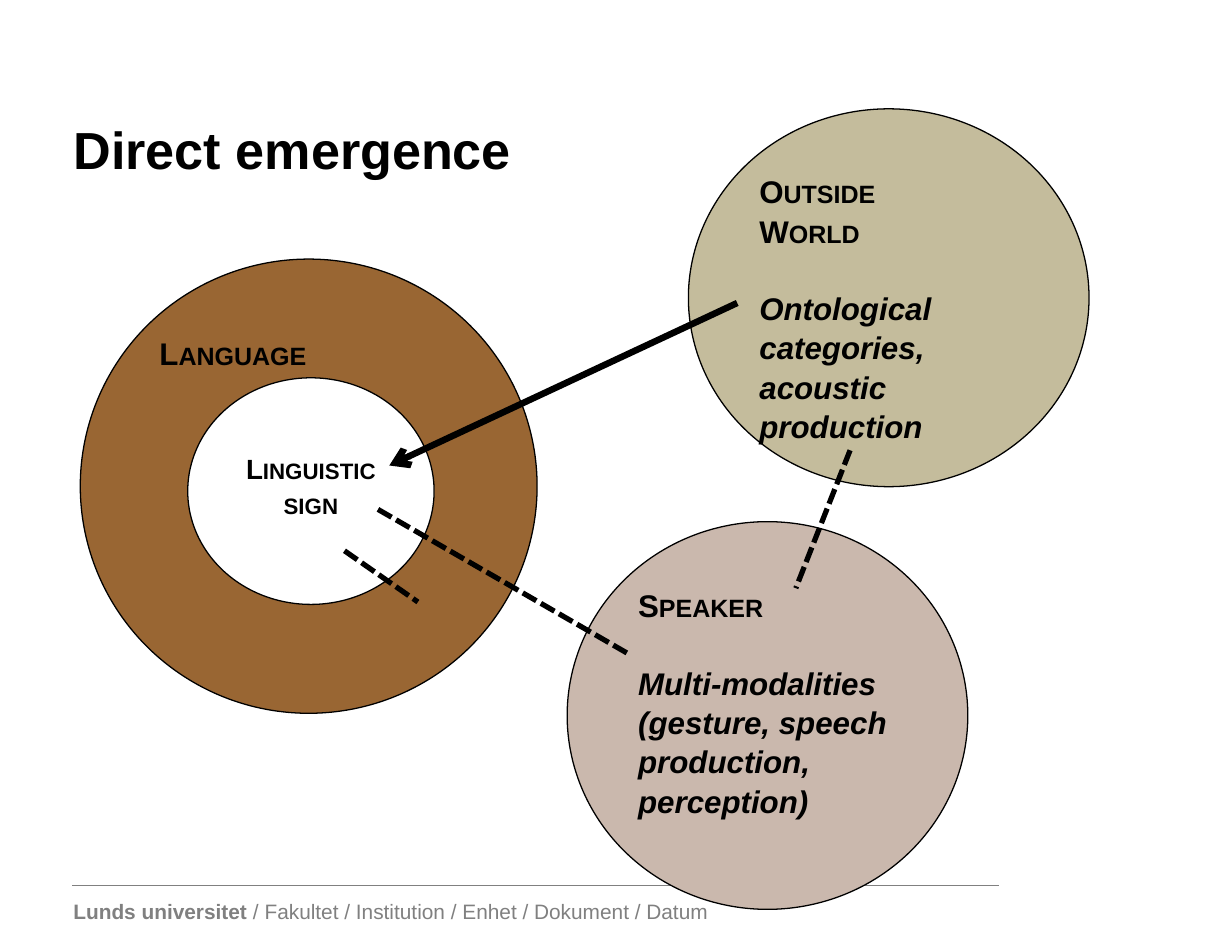
from lxml import etree
from pptx import Presentation
from pptx import util as u
from pptx.dml.color import RGBColor
from pptx.enum import dml, shapes, text
from pptx.oxml import ns

BLACK, GREY = "000000", "808080"
HEAD = {"size": u.Pt(18), "bold": True}
ITALIC = HEAD | {"italic": True}
SIGN = {"size": u.Pt(16), "bold": True}
FOOT = {"size": u.Pt(12)}
GAP = 21.7  # one line of 18 pt text


def paint(value):
    return RGBColor.from_string(value)


class Deck:
    font = "Arial"
    left = text.PP_ALIGN.LEFT
    mid = text.PP_ALIGN.CENTER

    def __init__(self, wide, high):
        self.prs = Presentation()
        self.prs.slide_width = u.Cm(wide)
        self.prs.slide_height = u.Cm(high)
        self.slide = self.prs.slides.add_slide(self.prs.slide_layouts[5])

    def run(self, para, words, style, color=BLACK, caps=False):
        run = para.add_run()
        run.text = words
        for key, value in ({"name": self.font} | style).items():
            setattr(run.font, key, value)
        run.font.color.rgb = paint(color)
        if caps:
            run.font._element.set("cap", "small")

    def frame(self, shape, anchor, top=0.13):
        frame = shape.text_frame
        looks = {"word_wrap": True, "auto_size": text.MSO_AUTO_SIZE.NONE,
                 "vertical_anchor": anchor, "margin_top": u.Cm(top)}
        for key, value in looks.items():
            setattr(frame, key, value)
        return frame

    def title(self, words, *box):
        shape = self.slide.shapes.title
        for key, value in zip(("left", "top", "width", "height"), box):
            setattr(shape, key, u.Cm(value))
        para = self.frame(shape, text.MSO_ANCHOR.MIDDLE).paragraphs[0]
        para.alignment = self.left
        self.run(para, words, {"size": u.Pt(30), "bold": True})

    def label(self, parts, color, *box):
        shape = self.slide.shapes.add_textbox(*map(u.Cm, box))
        para = self.frame(shape, text.MSO_ANCHOR.TOP).paragraphs[0]
        for words, style in parts:
            self.run(para, words, style, color)

    def disc(self, fill, box, paras, align=left, top=0.13):
        """Each item of paras is words, style, small caps, space before."""
        shape = self.slide.shapes.add_shape(
            shapes.MSO_SHAPE.OVAL, *map(u.Cm, box))
        shape.shadow.inherit = False
        shape.fill.solid()
        shape.fill.fore_color.rgb = paint(fill)
        shape.line.color.rgb = paint(BLACK)
        shape.line.width = u.Pt(0.75)
        frame = self.frame(shape, text.MSO_ANCHOR.TOP, top)
        for i, (words, style, caps, before) in enumerate(paras):
            para = frame.add_paragraph() if i else frame.paragraphs[0]
            para.alignment = align
            para.line_spacing = 1.05
            if before:
                para.space_before = u.Pt(before)
            self.run(para, words, style, caps=caps)

    def line(self, ends, width, color=BLACK, dash=None, arrow=False):
        line = self.slide.shapes.add_connector(
            shapes.MSO_CONNECTOR.STRAIGHT, *map(u.Cm, ends))
        line.line.color.rgb = paint(color)
        line.line.width = u.Pt(width)
        if dash:
            line.line.dash_style = dash
        props = line._element.spPr
        if arrow:
            tail = etree.SubElement(props.find(ns.qn("a:ln")),
                                    ns.qn("a:tailEnd"))
            tail.set("type", "arrow")
        etree.SubElement(props, ns.qn("a:effectLst"))


def main():
    deck = Deck(25, 19)

    # Footer and title
    deck.label([("Lunds universitet", FOOT | {"bold": True}),
                (" / Fakultet / Institution / Enhet / Dokument / Datum", FOOT)],
               GREY, 1.24, 18.11, 14, 0.76)
    deck.line((1.47, 17.98, 20.27, 17.98), 0.5, GREY)
    deck.title("Direct emergence", 1.24, 1.42, 22.5, 3.18)

    # Language with the sign inside it
    deck.disc("996633", (1.63, 5.26, 9.27, 9.22),
              [("Language", HEAD, True, 0)])
    deck.disc("FFFFFF", (3.81, 7.67, 5, 4.6),
              [("Linguistic", SIGN, True, 0), ("sign", SIGN, True, 0)],
              deck.mid, 0.8)

    # World and speaker
    deck.disc("C4BC9C", (13.97, 2.21, 8.13, 7.67),
              [("Outside", HEAD, True, 0), ("World", HEAD, True, 0),
               ("Ontological categories, acoustic production",
                ITALIC, False, GAP)])
    deck.disc("CAB8AD", (11.51, 10.59, 8.13, 7.87),
              [("Speaker", HEAD, True, 0),
               ("Multi-modalities", ITALIC, False, GAP),
               ("(gesture, speech production, perception)",
                ITALIC, False, 0)])

    # Direct link, then the indirect ones
    deck.line((14.96, 6.15, 7.9, 9.45), 3.75, arrow=True)
    for ends in ((7.67, 10.34, 12.73, 13.26),
                 (17.25, 9.14, 16.15, 11.94),
                 (6.99, 11.18, 8.48, 12.22)):
        deck.line(ends, 3, dash=dml.MSO_LINE.SQUARE_DOT)

    deck.prs.save("out.pptx")


if __name__ == "__main__":
    main()
